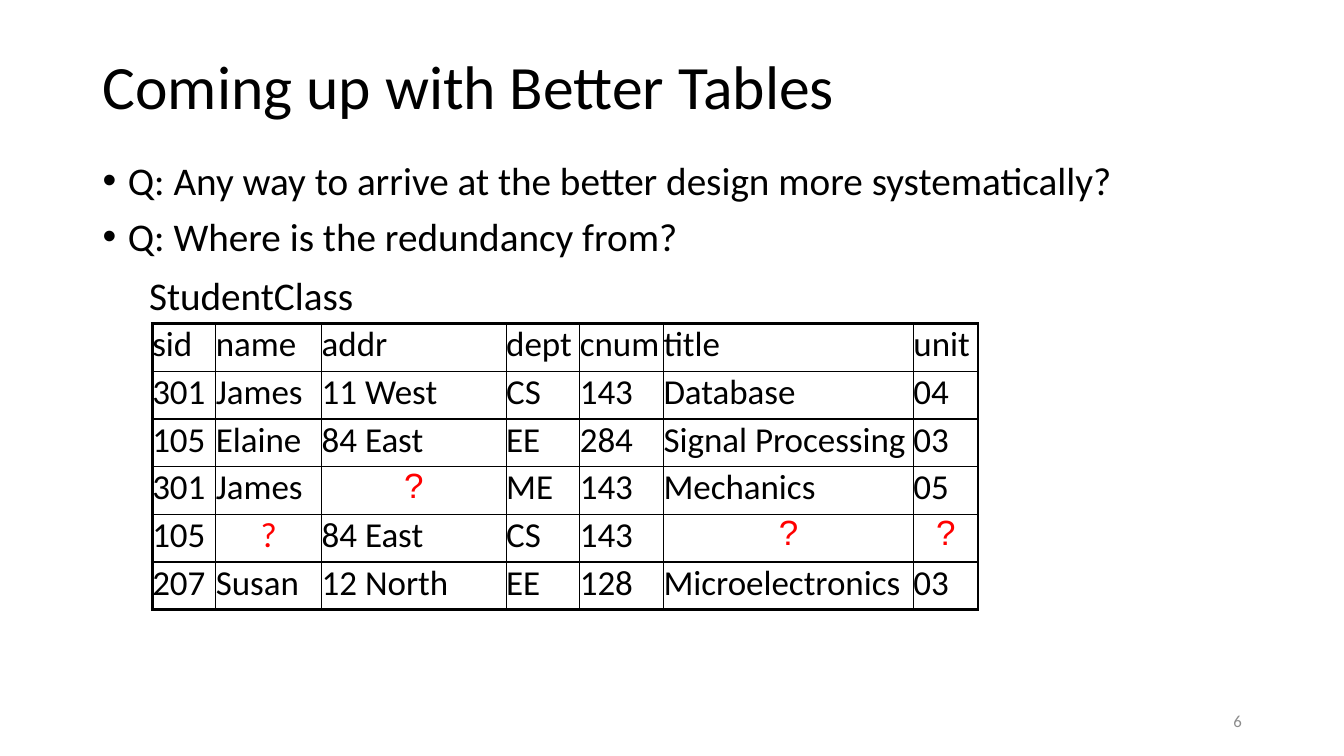
import dataclasses
import typing

import lxml.etree
import pptx
import pptx.dml.color
import pptx.enum.text
import pptx.oxml.ns
import pptx.util

SLIDE_WIDTH = pptx.util.Inches(13.333)
SLIDE_HEIGHT = pptx.util.Inches(7.5)
BLACK, RED, GRAY = "000000", "FF0000", "8C8C8C"
ALIGN = pptx.enum.text.PP_ALIGN
ANCHOR = pptx.enum.text.MSO_ANCHOR
qn = pptx.oxml.ns.qn


@dataclasses.dataclass
class Region:
    """A rectangle in percent of the slide's width and height."""
    left: float
    top: float
    width: float
    height: float

    def lengths(self) -> tuple[int, int, int, int]:
        return (across(self.left), down(self.top),
                across(self.width), down(self.height))


@dataclasses.dataclass
class TextBlock:
    region: Region
    lines: list[str]
    size: float
    color: str = BLACK
    bullet: bool = False
    frame_format: dict[str, typing.Any] = dataclasses.field(default_factory=dict)
    para_format: dict[str, typing.Any] = dataclasses.field(default_factory=dict)


@dataclasses.dataclass
class Column:
    name: str
    width: float  # percent of the slide's width
    values: list[str]


def across(percent: float) -> int:
    return round(SLIDE_WIDTH * percent / 100)


def down(percent: float) -> int:
    return round(SLIDE_HEIGHT * percent / 100)


def rgb(color: str) -> pptx.dml.color.RGBColor:
    return pptx.dml.color.RGBColor.from_string(color)


def apply_format(target: typing.Any, values: dict[str, typing.Any]) -> None:
    for name, value in values.items():
        setattr(target, name, value)


def write_span(para: typing.Any, text: str, size: float, color: str,
               font: str = "Calibri") -> None:
    span = para.add_run()
    span.text = text
    apply_format(span.font, {"size": pptx.util.Pt(size), "name": font})
    span.font.color.rgb = rgb(color)


def hang(para: typing.Any, inches: float) -> typing.Any:
    """Set a hanging indent and return the paragraph properties."""
    properties = para._p.get_or_add_pPr()
    indent = pptx.util.Inches(inches)
    properties.set("marL", str(indent))
    properties.set("indent", str(-indent))
    return properties


def draw_text(page: typing.Any, block: TextBlock) -> None:
    frame = page.shapes.add_textbox(*block.region.lengths()).text_frame
    apply_format(frame, {"word_wrap": True} | block.frame_format)
    for index, line in enumerate(block.lines):
        para = frame.add_paragraph() if index else frame.paragraphs[0]
        apply_format(para, block.para_format)
        if block.bullet:
            properties = hang(para, 0.25)
            lxml.etree.SubElement(properties, qn("a:buFont"), typeface="Arial")
            lxml.etree.SubElement(properties, qn("a:buChar"), char="•")
        write_span(para, line, block.size, block.color)


def draw_border(cell: typing.Any, side: str, width: float) -> None:
    line = lxml.etree.SubElement(cell._tc.get_or_add_tcPr(), qn(f"a:ln{side}"),
                                 w=str(pptx.util.Pt(width)))
    fill = lxml.etree.SubElement(line, qn("a:solidFill"))
    lxml.etree.SubElement(fill, qn("a:srgbClr"), val=BLACK)


def fill_cell(cell: typing.Any, text: str, outer_sides: dict[str, bool]) -> None:
    apply_format(cell, dict.fromkeys(
        ("margin_left", "margin_right", "margin_top", "margin_bottom"), 0))
    for side, is_outer in outer_sides.items():
        draw_border(cell, side, 2.25 if is_outer else 1)
    cell.fill.background()

    para = cell.text_frame.paragraphs[0]
    spacing = lxml.etree.SubElement(hang(para, 0.12), qn("a:spcBef"))
    lxml.etree.SubElement(spacing, qn("a:spcPct"), val="20000")
    if text.startswith("?"):
        para.alignment = ALIGN.CENTER
        write_span(para, "?", 25, RED, "Calibri" if text == "?c" else "Arial")
    else:
        write_span(para, text, 25, BLACK)


def draw_table(page: typing.Any, region: Region, columns: list[Column]) -> None:
    row_count = len(columns[0].values) + 1
    table = page.shapes.add_table(row_count, len(columns), *region.lengths()).table
    apply_format(table, {"first_row": False, "horz_banding": False})
    for row in table.rows:
        row.height = down(region.height / row_count)
    for column_index, column in enumerate(columns):
        table.columns[column_index].width = across(column.width)
        for row_index, text in enumerate([column.name, *column.values]):
            fill_cell(table.cell(row_index, column_index), text, {
                "L": column_index == 0,
                "R": column_index == len(columns) - 1,
                "T": row_index == 0,
                "B": row_index == row_count - 1,
            })


# "?" marks an unknown value in Arial, "?c" one in Calibri
STUDENT_CLASS = [
    Column("sid", 4.73, ["301", "105", "301", "105", "207"]),
    Column("name", 7.88, ["James", "Elaine", "James", "?c", "Susan"]),
    Column("addr", 13.73, ["11 West", "84 East", "?", "84 East", "12 North"]),
    Column("dept", 5.48, ["CS", "EE", "ME", "CS", "EE"]),
    Column("cnum", 6.23, ["143", "284", "143", "143", "128"]),
    Column("title", 18.6, ["Database", "Signal Processing", "Mechanics", "?",
                           "Microelectronics"]),
    Column("unit", 4.8, ["04", "03", "05", "?", "03"]),
]

TEXT_BLOCKS = [
    # Title
    TextBlock(Region(6.9, 5.33, 86.25, 12.93), ["Coming up with Better Tables"], 44,
              frame_format={"vertical_anchor": ANCHOR.MIDDLE},
              para_format={"line_spacing": 0.9}),
    # Questions
    TextBlock(Region(6.9, 20.67, 86.25, 69.47),
              ["Q: Any way to arrive at the better design more systematically?",
               "Q: Where is the redundancy from?"], 28, bullet=True,
              para_format={"line_spacing": 0.9, "space_before": pptx.util.Pt(10)}),
    # Table name
    TextBlock(Region(10.35, 35.2, 16.88, 7.6), ["StudentClass"], 28,
              frame_format={"word_wrap": False,
                            "auto_size": pptx.enum.text.MSO_AUTO_SIZE.SHAPE_TO_FIT_TEXT}),
    # Page number
    TextBlock(Region(70.65, 92.67, 22.5, 5.33), ["6"], 12, GRAY,
              frame_format={"vertical_anchor": ANCHOR.MIDDLE},
              para_format={"alignment": ALIGN.RIGHT}),
]


def main() -> None:
    deck = pptx.Presentation()
    apply_format(deck, {"slide_width": SLIDE_WIDTH, "slide_height": SLIDE_HEIGHT})
    page = deck.slides.add_slide(deck.slide_layouts[6])
    for block in TEXT_BLOCKS:
        draw_text(page, block)
    draw_table(page, Region(11.33, 42.8, 61.45, 37.87), STUDENT_CLASS)
    deck.save("out.pptx")


if __name__ == "__main__":
    main()
